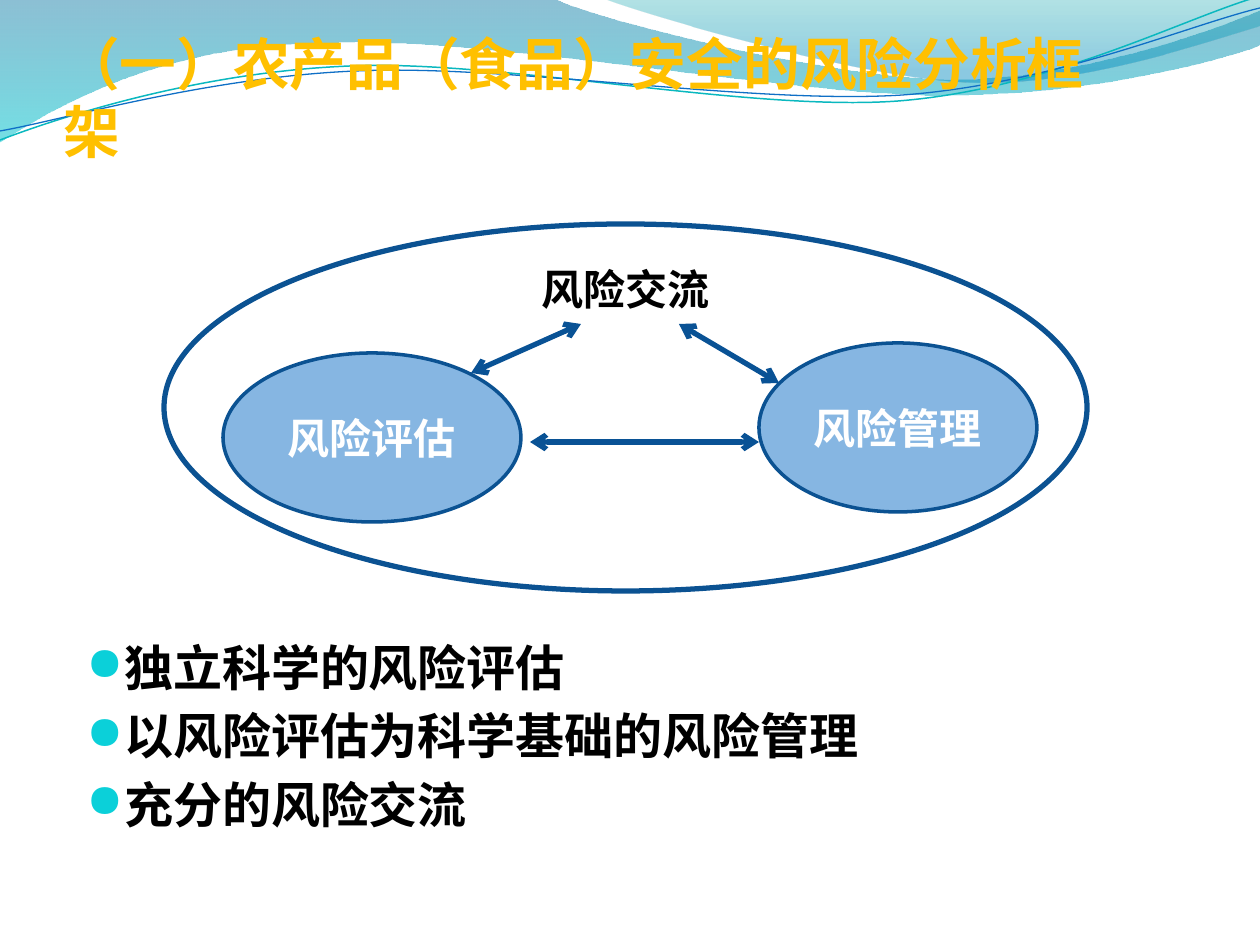
import pptx
import pptx.util
import pptx.dml.color
import pptx.enum.shapes
import pptx.enum.text
import pptx.oxml.ns
from lxml import etree

PX = 914400 / 126
COLORS = {
    "title": "FFC000", "text": "000000", "label": "FFFFFF",
    "oval": "0F6FC6", "outline": "0B5292", "arrow": "095295", "bullet": "0BD0D9",
    "teal line": "0AB8BF", "blue line": "0F6FC6",
    "deep blue": "0074A1", "cyan": "00C6CF", "teal": "00A1A9", "sky": "008BBF",
}
HEADING_FONT, BODY_FONT, BULLET_FONT = "Calibri", "TeX Gyre Pagella", "OpenSymbol"

# Each wave is a start point, then one point for a line or three for a curve.
LEFT_WAVE = [(0, -1), [(554, -1)],
             [(600, 21), (837, 79), (955, 79)], [(1075, 79), (1207, 33), (1260, 11)],
             [(1261, 45)], [(1239, 55), (1096, 96), (940, 95)],
             [(783, 95), (481, 35), (324, 43)], [(163, 44), (58, 105), (-1, 142)],
             [(0, -1)]]
RIGHT_WAVE = [(604, -1), [(641, 14), (859, 78), (969, 82)],
              [(1079, 87), (1211, 40), (1260, 26)], [(1260, 0)], [(604, -1)]]
TEAL_STRAND = [(0, 140), [(60, 117), (199, 72), (349, 66)],
               [(498, 59), (747, 112), (898, 101)], [(1050, 89), (1182, 19), (1257, -3)]]
BLUE_STRAND = [(0, 131), [(59, 121), (207, 77), (357, 71)],
               [(508, 64), (752, 105), (903, 95)], [(1053, 84), (1186, 26), (1260, 8)]]


def emu(px):
    return pptx.util.Emu(round(px * PX))


def rgb(name):
    return pptx.dml.color.RGBColor.from_string(COLORS[name])


def add_xml(parent, tag, **attributes):
    return etree.SubElement(parent, pptx.oxml.ns.qn(tag), attributes)


def set_alpha(owner, percent):
    """Make every srgbClr below the owner partly transparent."""
    for color in owner.iter(pptx.oxml.ns.qn("a:srgbClr")):
        add_xml(color, "a:alpha", val=str(percent * 1000))


class SlideBuilder:
    def __init__(self, slide):
        self.shapes = slide.shapes

    def style_text(self, paragraph, size, color, font=BODY_FONT, align="LEFT"):
        paragraph.alignment = getattr(pptx.enum.text.PP_ALIGN, align)
        paragraph.font.name = font
        paragraph.font.size = pptx.util.Pt(size)
        paragraph.font.bold = True
        paragraph.font.color.rgb = rgb(color)

    def outline(self, shape, color, width):
        shape.line.color.rgb = rgb(color)
        shape.line.width = pptx.util.Pt(width)

    def freeform(self, outline, close):
        """Build a straight-sided outline, then turn each three-point run into a curve."""
        start, *segments = outline
        builder = self.shapes.build_freeform(emu(start[0]), emu(start[1]))
        builder.add_line_segments([(emu(x), emu(y)) for s in segments for x, y in s], close=close)
        shape = builder.convert_to_shape()
        shape.shadow.inherit = False
        sides = iter(list(shape.element.iter(pptx.oxml.ns.qn("a:lnTo"))))
        for segment in segments:
            run = [next(sides) for _ in segment]
            if len(run) == 3:
                curve = etree.Element(pptx.oxml.ns.qn("a:cubicBezTo"))
                run[0].addprevious(curve)
                for side in run:
                    curve.append(side[0])
                    side.getparent().remove(side)
        return shape

    def wave(self, outline, stops):
        """Draw a filled wave; stops are (position, color, opacity percent)."""
        shape = self.freeform(outline, True)
        shape.line.fill.background()
        shape.fill.gradient()
        shape.fill.gradient_angle = 270
        gradient_xml = shape.element.iter(pptx.oxml.ns.qn("a:gs"))
        for stop, gs, (position, color, opacity) in zip(
                shape.fill.gradient_stops, list(gradient_xml), stops):
            stop.position = position
            stop.color.rgb = rgb(color)
            set_alpha(gs, opacity)

    def strand(self, outline, color, width):
        shape = self.freeform(outline, False)
        shape.fill.background()
        self.outline(shape, color, width)

    def title(self, text, left, top, width, height):
        title = self.shapes.title
        title.left, title.top, title.width, title.height = map(emu, (left, top, width, height))
        frame = title.text_frame
        frame.text = text
        frame.word_wrap = True
        frame.auto_size = pptx.enum.text.MSO_AUTO_SIZE.NONE
        frame.vertical_anchor = pptx.enum.text.MSO_ANCHOR.BOTTOM
        frame.margin_left = frame.margin_right = frame.margin_bottom = 0
        self.style_text(frame.paragraphs[0], 32.4, "title", HEADING_FONT)
        title.element.getparent().append(title.element)  # in front of the waves

    def bullets(self, lines, left, top, width, height):
        frame = self.shapes.add_textbox(*map(emu, (left, top, width, height))).text_frame
        frame.word_wrap = True
        frame.text = "\n".join(lines)
        for paragraph in frame.paragraphs:
            self.style_text(paragraph, 28, "text")
            paragraph.space_before = pptx.util.Pt(5.6)
            defaults = paragraph.font._element
            properties = defaults.getparent()
            properties.set("marL", str(emu(38)))
            properties.set("indent", str(-emu(38)))
            add_xml(add_xml(properties, "a:buClr"), "a:srgbClr", val=COLORS["bullet"])
            add_xml(properties, "a:buSzPct", val="95000")
            add_xml(properties, "a:buFont", typeface=BULLET_FONT)
            add_xml(properties, "a:buChar", char="●")
            properties.append(defaults)  # the schema wants it after the bullet

    def oval(self, left, top, width, height, line_width, text, color, fill=None, bottom_inset=6):
        shape = self.shapes.add_shape(pptx.enum.shapes.MSO_SHAPE.OVAL,
                                      *map(emu, (left, top, width, height)))
        shape.shadow.inherit = False
        self.outline(shape, "outline", line_width)
        if fill:
            shape.fill.solid()
            shape.fill.fore_color.rgb = rgb(fill)
            set_alpha(shape.element.spPr.find(pptx.oxml.ns.qn("a:solidFill")), 50)
        else:
            shape.fill.background()
        frame = shape.text_frame
        frame.text = text
        frame.word_wrap = False
        frame.vertical_anchor = pptx.enum.text.MSO_ANCHOR.MIDDLE
        frame.margin_top, frame.margin_bottom = emu(6), emu(bottom_inset)
        self.style_text(frame.paragraphs[0], 24, color, align="CENTER")

    def double_arrow(self, x1, y1, x2, y2):
        arrow = self.shapes.add_connector(pptx.enum.shapes.MSO_CONNECTOR.STRAIGHT,
                                          *map(emu, (x1, y1, x2, y2)))
        self.outline(arrow, "arrow", 3)
        line = arrow.line._get_or_add_ln()
        for end in ("a:headEnd", "a:tailEnd"):
            add_xml(line, end, type="arrow")
        add_xml(arrow.element.spPr, "a:effectLst")


def main():
    presentation = pptx.Presentation()
    presentation.slide_width, presentation.slide_height = emu(1260), emu(945)
    page = SlideBuilder(presentation.slides.add_slide(presentation.slide_layouts[5]))

    page.wave(LEFT_WAVE, [(0, "deep blue", 45), (1, "cyan", 55)])
    page.wave(RIGHT_WAVE, [(0, "teal", 30), (0.8, "sky", 45)])
    page.strand(TEAL_STRAND, "teal line", 0.85)
    page.strand(BLUE_STRAND, "blue line", 0.75)
    page.title("（一）农产品（食品）安全的风险分析框架", 63, 38, 1071, 127)
    page.bullets(["独立科学的风险评估", "以风险评估为科学基础的风险管理", "充分的风险交流"],
                 74, 631, 883, 238)

    page.oval(223, 353, 298, 169, 2, "风险评估", "label", fill="oval")
    page.oval(759, 343, 278, 169, 2, "风险管理", "label", fill="oval")
    page.oval(164, 224, 923, 367, 3, "风险交流", "text", bottom_inset=244)
    for ends in [(530, 442, 759, 442), (471, 373, 581, 324), (779, 383, 679, 324)]:
        page.double_arrow(*ends)
    presentation.save("out.pptx")


if __name__ == "__main__":
    main()
